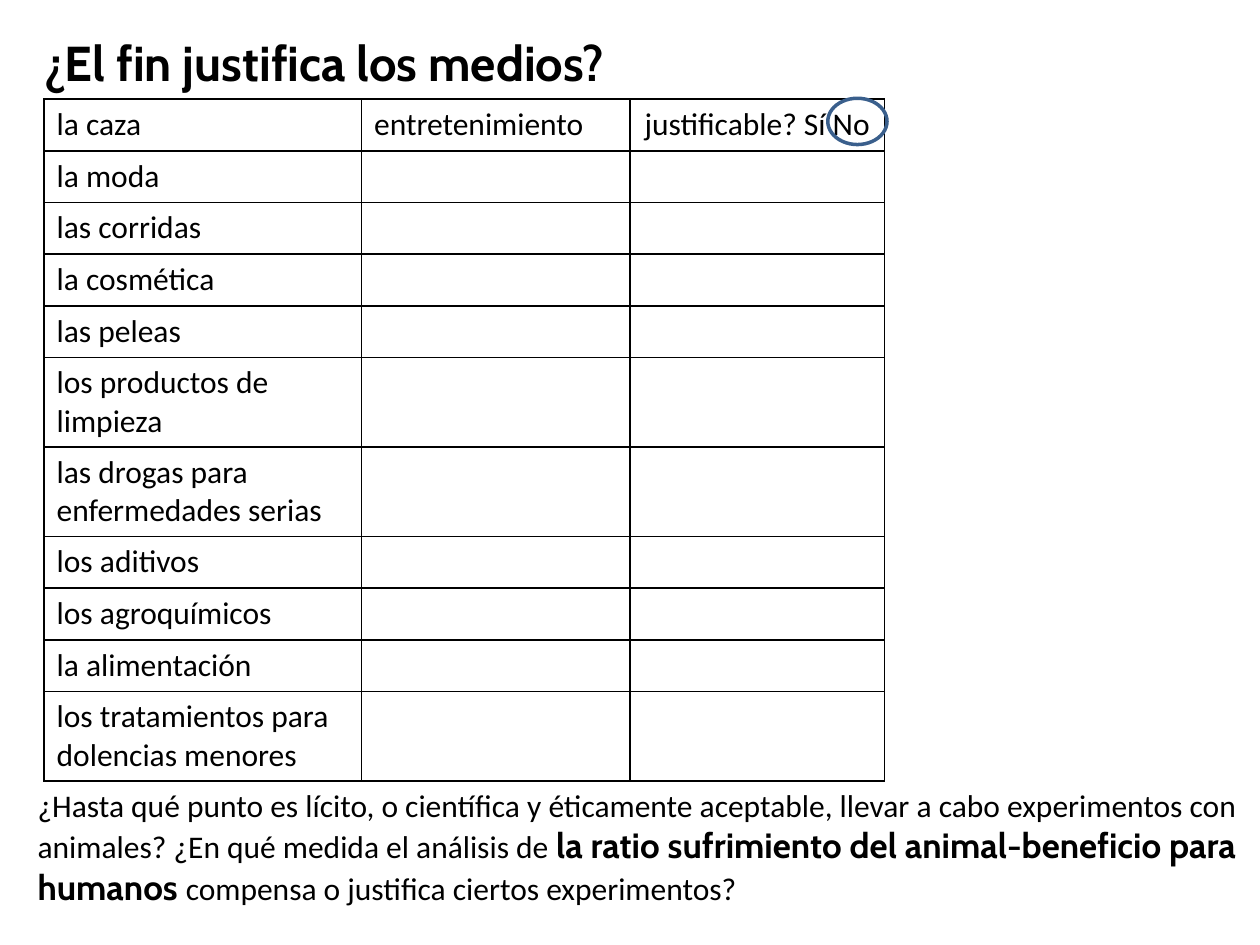
"""Build a slide with a table that asks which uses of animals are justified."""
from lxml import etree
from pptx import Presentation
from pptx.dml.color import RGBColor
from pptx.enum.shapes import MSO_SHAPE
from pptx.enum.text import MSO_ANCHOR, MSO_AUTO_SIZE, PP_ALIGN
from pptx.oxml.ns import qn
from pptx.util import Inches, Pt

OVAL = MSO_SHAPE.OVAL
TOP = MSO_ANCHOR.TOP
FIXED = MSO_AUTO_SIZE.NONE
LEFT, CENTER = PP_ALIGN.LEFT, PP_ALIGN.CENTER
HEX = {"text": "000000", "ring": "3A5F8C"}
TOPICS = [
    "la caza", "la moda", "las corridas", "la cosmética", "las peleas",
    "los productos de limpieza", "las drogas para enfermedades serias",
    "los aditivos", "los agroquímicos", "la alimentación",
    "los tratamientos para dolencias menores",
]
HEADS = {1: "entretenimiento", 2: "justificable? Sí No"}
COLS = [2.52, 2.13, 2.02]
ROW = 0.41

deck = Presentation()
deck.slide_width, deck.slide_height = Inches(10), Inches(7.5)
wide, high = deck.slide_width, deck.slide_height
slide = deck.slides.add_slide(deck.slide_layouts[5])


def write(frame, text, size=18, font="Calibri", bold=False, align=LEFT):
    par = frame.paragraphs[0]
    par.alignment = align
    run = par.add_run()
    run.text = text
    run.font.size, run.font.name, run.font.bold = Pt(size), font, bold
    run.font.color.rgb = RGBColor.from_string(HEX["text"])


def place(shape, left, top, width, height):
    shape.left, shape.width = int(left * wide), int(width * wide)
    shape.top, shape.height = int(top * high), int(height * high)
    frame = shape.text_frame
    frame.word_wrap, frame.auto_size = True, FIXED
    frame.vertical_anchor = TOP
    return frame


title = place(slide.shapes.title, 0.025, 0.028, 0.963, 0.076)
write(title, "¿El fin justifica los medios?", size=28, font="Cabin", bold=True)

note = place(slide.shapes.add_textbox(0, 0, 0, 0), 0.02, 0.825, 0.972, 0.144)
write(note, "¿Hasta qué punto es lícito, o científica y éticamente aceptable, "
      "llevar a cabo experimentos con animales? ¿En qué medida el análisis de ")
write(note, "la ratio sufrimiento del animal-beneficio para humanos ",
      size=20, font="Cabin", bold=True)
write(note, "compensa o justifica ciertos experimentos?")

table = slide.shapes.add_table(
    len(TOPICS), len(COLS), int(0.035 * wide), int(0.105 * high),
    Inches(sum(COLS)), Inches(ROW * len(TOPICS))).table
table.first_row = table.horz_banding = False
for col, width in zip(table.columns, COLS):
    col.width = Inches(width)
for row, topic in enumerate(TOPICS):
    table.rows[row].height = Inches(ROW)
    for col in range(len(COLS)):
        cell = table.cell(row, col)
        cell.fill.background()
        props = cell.fill._xPr
        for spot, side in enumerate(("a:lnL", "a:lnR", "a:lnT", "a:lnB")):
            edge = etree.Element(qn(side), w=str(Pt(1)))
            fill = etree.SubElement(edge, qn("a:solidFill"))
            etree.SubElement(fill, qn("a:srgbClr"), val=HEX["text"])
            props.insert(spot, edge)
        if col == 0:
            write(cell.text_frame, topic)
        elif row == 0:
            write(cell.text_frame, HEADS[col], align=CENTER if col == 2 else LEFT)

ring = slide.shapes.add_shape(OVAL, 0, 0, 0, 0)
place(ring, 0.657, 0.104, 0.047, 0.049)
ring.shadow.inherit = False
ring.fill.background()
ring.line.color.rgb = RGBColor.from_string(HEX["ring"])
ring.line.width = Pt(2)

deck.save("out.pptx")
